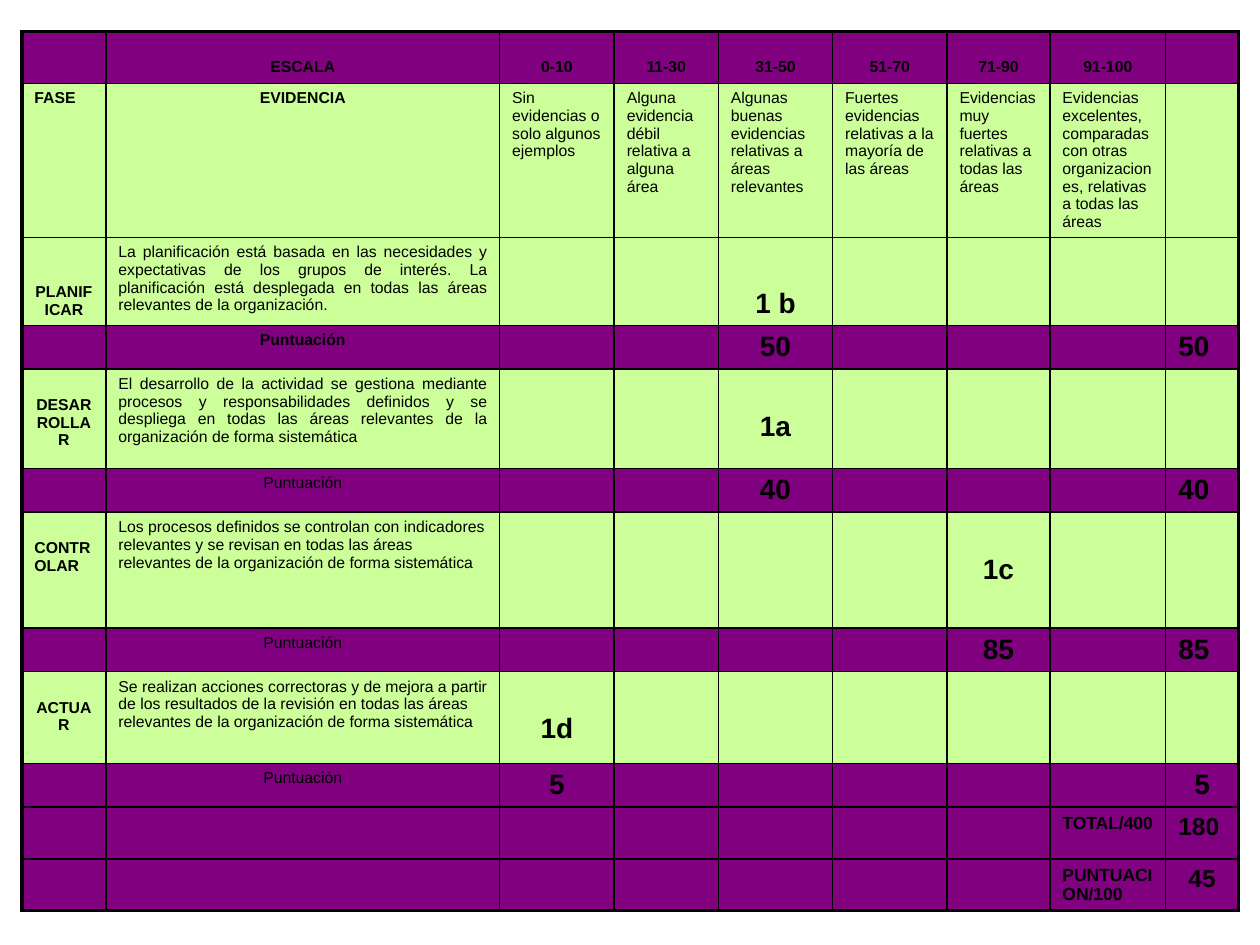
from lxml.etree import SubElement
from pptx import Presentation
from pptx.dml.color import RGBColor
from pptx.enum.text import MSO_ANCHOR, PP_ALIGN
from pptx.oxml.ns import qn
from pptx.util import Pt

PURPLE = RGBColor(0x80, 0x00, 0x80)
GREEN = RGBColor(0xCC, 0xFF, 0x99)
BLACK = RGBColor(0x00, 0x00, 0x00)
FONT = "Arial"
LEFT, CENTER, JUSTIFY = PP_ALIGN.LEFT, PP_ALIGN.CENTER, PP_ALIGN.JUSTIFY

# Content: scale ranges with their descriptions
SCALE = [
    ("0-10", "Sin evidencias o solo algunos ejemplos"),
    ("11-30", "Alguna evidencia débil relativa a alguna área"),
    ("31-50", "Algunas buenas evidencias relativas a áreas relevantes"),
    ("51-70", "Fuertes evidencias relativas a la mayoría de las áreas"),
    ("71-90", "Evidencias muy fuertes relativas a todas las áreas"),
    ("91-100", "Evidencias excelentes, comparadas con otras organizaciones, "
               "relativas a todas las áreas"),
]

# Phase, evidence, evidence alignment, scored column, mark, score
PHASES = [
    ("PLANIFICAR", "La planificación está basada en las necesidades y expectativas de "
     "los grupos de interés. La planificación está desplegada en todas las áreas "
     "relevantes de la organización.", JUSTIFY, 4, "1 b", "50"),
    ("DESARROLLAR", "El desarrollo de la actividad se gestiona mediante procesos y "
     "responsabilidades definidos y se despliega en todas las áreas relevantes de la "
     "organización de forma sistemática", JUSTIFY, 4, "1a", "40"),
    ("CONTROLAR", "Los procesos definidos se controlan con indicadores relevantes y se "
     "revisan en todas las áreas relevantes de la organización de forma sistemática",
     LEFT, 6, "1c", "85"),
    ("ACTUAR", "Se realizan acciones correctoras y de mejora a partir de los resultados "
     "de la revisión en todas las áreas relevantes de la organización de forma "
     "sistemática", LEFT, 2, "1d", "5"),
]
TOTALS = [("TOTAL/400", "180", LEFT), ("PUNTUACION/100", "45", CENTER)]

# Table geometry in points
TABLE_LEFT, TABLE_TOP = 12.5, 18
COLUMN_WIDTHS = [48, 225, 65.5, 59.5, 65.3, 65.4, 58.8, 66.2, 41.6]
ROW_HEIGHTS = [29.6, 88, 50.3, 25, 56.8, 25, 66.2, 25, 52.4, 25, 29.6, 29.6]
THIN, THICK = 1, 2.25
LAST_ROW, LAST_COLUMN = len(ROW_HEIGHTS) - 1, len(COLUMN_WIDTHS) - 1


def write(cell, text, size=9, bold=True, align=LEFT, top=3.6, anchor=MSO_ANCHOR.TOP):
    cell.text_frame.text = text
    cell.margin_top = Pt(top)
    cell.vertical_anchor = anchor
    paragraph = cell.text_frame.paragraphs[0]
    paragraph.alignment = align
    font = paragraph.runs[0].font
    font.name, font.size, font.bold = FONT, Pt(size), bold
    font.color.rgb = BLACK


def add_borders(cell, row, column):
    properties = cell._tc.get_or_add_tcPr()
    outer_sides = {
        "a:lnL": column == 0,
        "a:lnR": column == LAST_COLUMN,
        "a:lnT": row == 0,
        "a:lnB": row == LAST_ROW,
    }
    for position, (tag, is_outer) in enumerate(outer_sides.items()):
        width = Pt(THICK if is_outer else THIN)
        line = SubElement(properties, qn(tag), w=str(int(width)))
        fill = SubElement(line, qn("a:solidFill"))
        SubElement(fill, qn("a:srgbClr"), val=str(BLACK))
        properties.insert(position, line)


presentation = Presentation()
presentation.slide_width, presentation.slide_height = Pt(720), Pt(540)
slide = presentation.slides.add_slide(presentation.slide_layouts[6])

# Empty grid
table = slide.shapes.add_table(
    len(ROW_HEIGHTS), len(COLUMN_WIDTHS), Pt(TABLE_LEFT), Pt(TABLE_TOP),
    Pt(sum(COLUMN_WIDTHS)), Pt(sum(ROW_HEIGHTS))).table
table.first_row = table.horz_banding = False
for column, width in enumerate(COLUMN_WIDTHS):
    table.columns[column].width = Pt(width)
for row, height in enumerate(ROW_HEIGHTS):
    table.rows[row].height = Pt(height)

# Header and scale descriptions
write(table.cell(0, 1), "ESCALA", align=CENTER, top=15)
write(table.cell(1, 0), "FASE")
write(table.cell(1, 1), "EVIDENCIA", align=CENTER)
for column, (score_range, description) in enumerate(SCALE, start=2):
    write(table.cell(0, column), score_range, align=CENTER, top=15)
    write(table.cell(1, column), description, bold=False)

# Each phase: an evidence row and a score row
for index, (phase, evidence, align, column, mark, score) in enumerate(PHASES):
    row = 2 + 2 * index
    is_first = index == 0
    anchor = MSO_ANCHOR.BOTTOM if is_first else MSO_ANCHOR.TOP
    write(table.cell(row, 0), phase, align=LEFT if phase == "CONTROLAR" else CENTER,
          top=3.6 if is_first else 15.5, anchor=anchor)
    write(table.cell(row, 1), evidence, bold=False, align=align)
    write(table.cell(row, column), mark, size=16, align=CENTER,
          top=3.6 if is_first else 24, anchor=anchor)
    write(table.cell(row + 1, 1), "Puntuación", bold=is_first, align=CENTER)
    write(table.cell(row + 1, column), score, size=16, align=CENTER)
    write(table.cell(row + 1, LAST_COLUMN), score, size=16,
          align=CENTER if len(score) == 1 else LEFT)

# Totals
for row, (label, value, align) in enumerate(TOTALS, start=LAST_ROW - 1):
    write(table.cell(row, LAST_COLUMN - 1), label, size=10)
    write(table.cell(row, LAST_COLUMN), value, size=14, align=align)

# Fills, borders and the line height of empty cells
green_rows = {1} | {2 + 2 * index for index in range(len(PHASES))}
for row in range(LAST_ROW + 1):
    for column in range(LAST_COLUMN + 1):
        cell = table.cell(row, column)
        cell.fill.solid()
        cell.fill.fore_color.rgb = GREEN if row in green_rows else PURPLE
        add_borders(cell, row, column)
        if not cell.text_frame.text:
            paragraph = cell.text_frame.paragraphs[0]
            SubElement(paragraph._p, qn("a:endParaRPr"), sz="900")

presentation.save("out.pptx")
